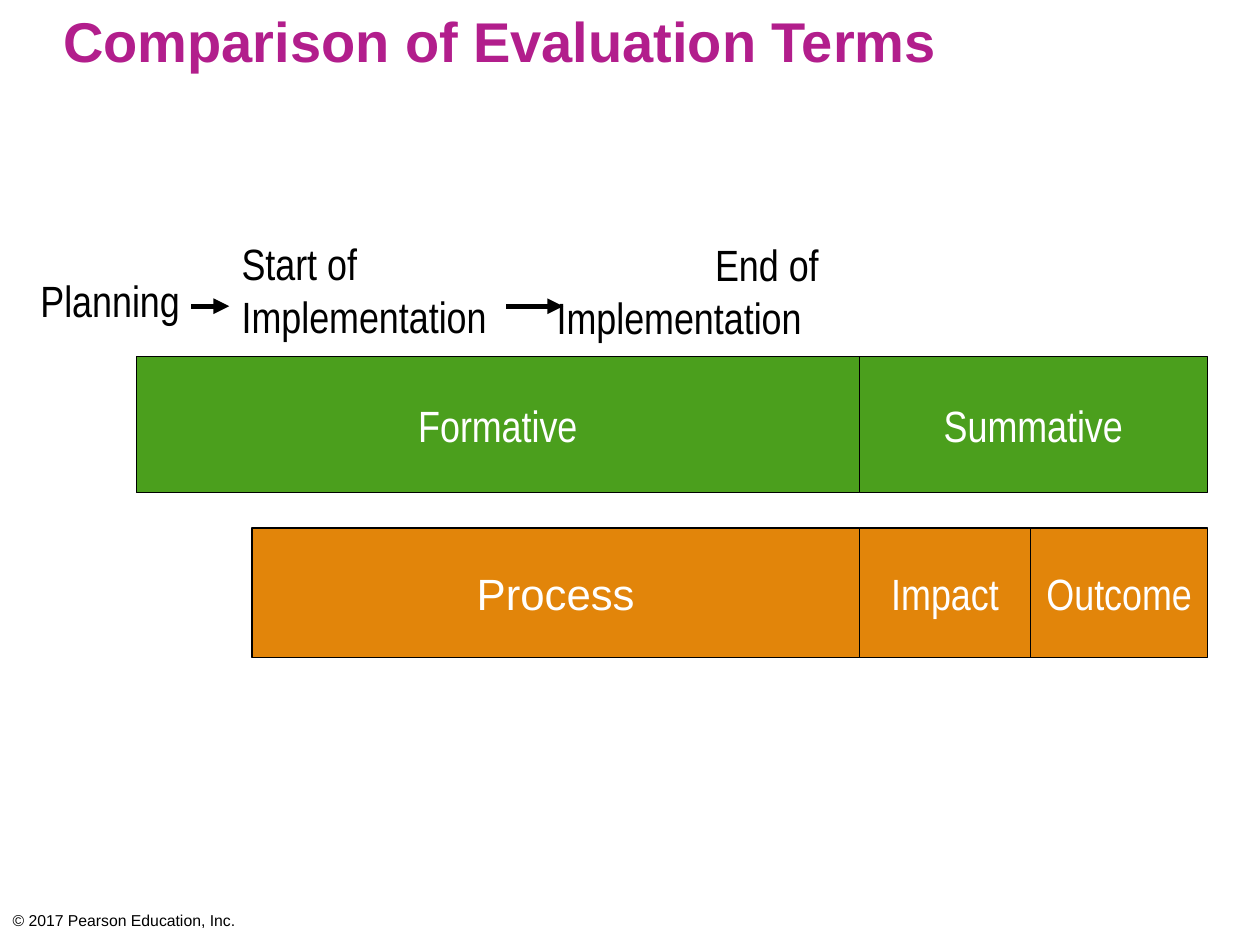
"""Build a slide comparing evaluation terms along a programme timeline."""
import dataclasses

import pptx
import pptx.dml.color
import pptx.enum.shapes
import pptx.enum.text
import pptx.oxml
import pptx.oxml.ns
import pptx.util

Pt = pptx.util.Pt
ALIGN = pptx.enum.text.PP_ALIGN
ANCHOR = pptx.enum.text.MSO_ANCHOR


@dataclasses.dataclass(frozen=True)
class Theme:
    title: str = "B21E8C"
    green: str = "4B9F1D"
    orange: str = "E2850A"
    ink: str = "000000"
    white: str = "FFFFFF"
    font: str = "Arial"
    narrow: str = "Arial Narrow"
    title_size: float = 32
    label_size: float = 25
    small_size: float = 9
    border: float = 0.75
    arrow: float = 3


class Deck:
    def __init__(self, theme):
        self.theme = theme
        self.prs = pptx.Presentation()
        self.prs.slide_width, self.prs.slide_height = Pt(720), Pt(540)
        self.s = self.prs.slides.add_slide(self.prs.slide_layouts[5])

    def color(self, value):
        return pptx.dml.color.RGBColor.from_string(value)

    def set_text(self, sp, text, size, font, color, aligns=(ALIGN.LEFT,),
                 insets=(7.2, 3.6, 7.2, 3.6), anchor=ANCHOR.TOP, wrap=True, bold=False):
        tf = sp.text_frame
        tf.text = text
        tf.auto_size = pptx.enum.text.MSO_AUTO_SIZE.NONE
        tf.word_wrap, tf.vertical_anchor = wrap, anchor
        tf.margin_left, tf.margin_top, tf.margin_right, tf.margin_bottom = map(Pt, insets)
        for p, align in zip(tf.paragraphs, aligns):
            p.alignment = align
            for r in p.runs:
                r.font.name, r.font.size, r.font.bold = font, Pt(size), bold
                r.font.color.rgb = self.color(color)

    def title(self, text):
        sp = self.s.shapes.title
        sp.left, sp.top, sp.width, sp.height = Pt(0), Pt(0), Pt(720), Pt(45)
        self.set_text(sp, text, self.theme.title_size, self.theme.font, self.theme.title,
                      insets=(36, 3.6, 7.2, 3.6), bold=True)

    def text(self, box, text, size, font, **style):
        sp = self.s.shapes.add_textbox(*map(Pt, box))
        self.set_text(sp, text, size, font, self.theme.ink, **style)

    def bar(self, top, height, edges, labels, fill):
        for left, right, (text, font) in zip(edges, edges[1:], labels):
            sp = self.s.shapes.add_shape(
                pptx.enum.shapes.MSO_SHAPE.RECTANGLE,
                Pt(left), Pt(top), Pt(right - left), Pt(height))
            sp.shadow.inherit = False
            sp.fill.solid()
            sp.fill.fore_color.rgb = self.color(fill)
            sp.line.color.rgb = self.color(self.theme.ink)
            sp.line.width = Pt(self.theme.border)
            self.set_text(sp, text, self.theme.label_size, font, self.theme.white,
                          aligns=(ALIGN.CENTER,), anchor=ANCHOR.MIDDLE, wrap=False)

    def arrow(self, start, end, y):
        sp = self.s.shapes.add_connector(
            pptx.enum.shapes.MSO_CONNECTOR.STRAIGHT, Pt(start), Pt(y), Pt(end), Pt(y))
        sp.line.color.rgb = self.color(self.theme.ink)
        sp.line.width = Pt(self.theme.arrow)
        ns = pptx.oxml.ns.nsdecls("a")
        spPr = sp._element.spPr
        spPr.find(pptx.oxml.ns.qn("a:ln")).append(
            pptx.oxml.parse_xml(f'<a:tailEnd {ns} type="triangle"/>'))
        spPr.append(pptx.oxml.parse_xml(f"<a:effectLst {ns}/>"))


def main():
    theme = Theme()
    deck = Deck(theme)
    size, narrow = theme.label_size, theme.narrow

    deck.title("Comparison of Evaluation Terms")
    deck.text((7.2, 520.6, 424.8, 14.4), "© 2017 Pearson Education, Inc.",
              theme.small_size, theme.font, insets=(0, 0, 0, 0))

    deck.text((131, 132, 163.4, 92), "Start of\nImplementation", size, narrow,
              aligns=(ALIGN.LEFT, ALIGN.LEFT))
    deck.bar(301.7, 74.2, (144, 491, 589, 690),
             (("Process", theme.font), ("Impact", narrow), ("Outcome", narrow)), theme.orange)
    deck.bar(203.8, 77.8, (78, 491, 690),
             (("Formative", narrow), ("Summative", narrow)), theme.green)
    deck.text((16.6, 153.4, 114.5, 67), "Planning", size, narrow,
              insets=(6.5, 2.9, 6.5, 2.9))
    deck.text((311, 132.5, 169.2, 92), "End of\nImplementation", size, narrow,
              aligns=(ALIGN.RIGHT, ALIGN.LEFT), insets=(7.2, 3.6, 12.4, 3.6))

    for start, end in ((109.4, 131), (289.4, 321.8)):
        deck.arrow(start, end, 175)

    deck.prs.save("out.pptx")


if __name__ == "__main__":
    main()
